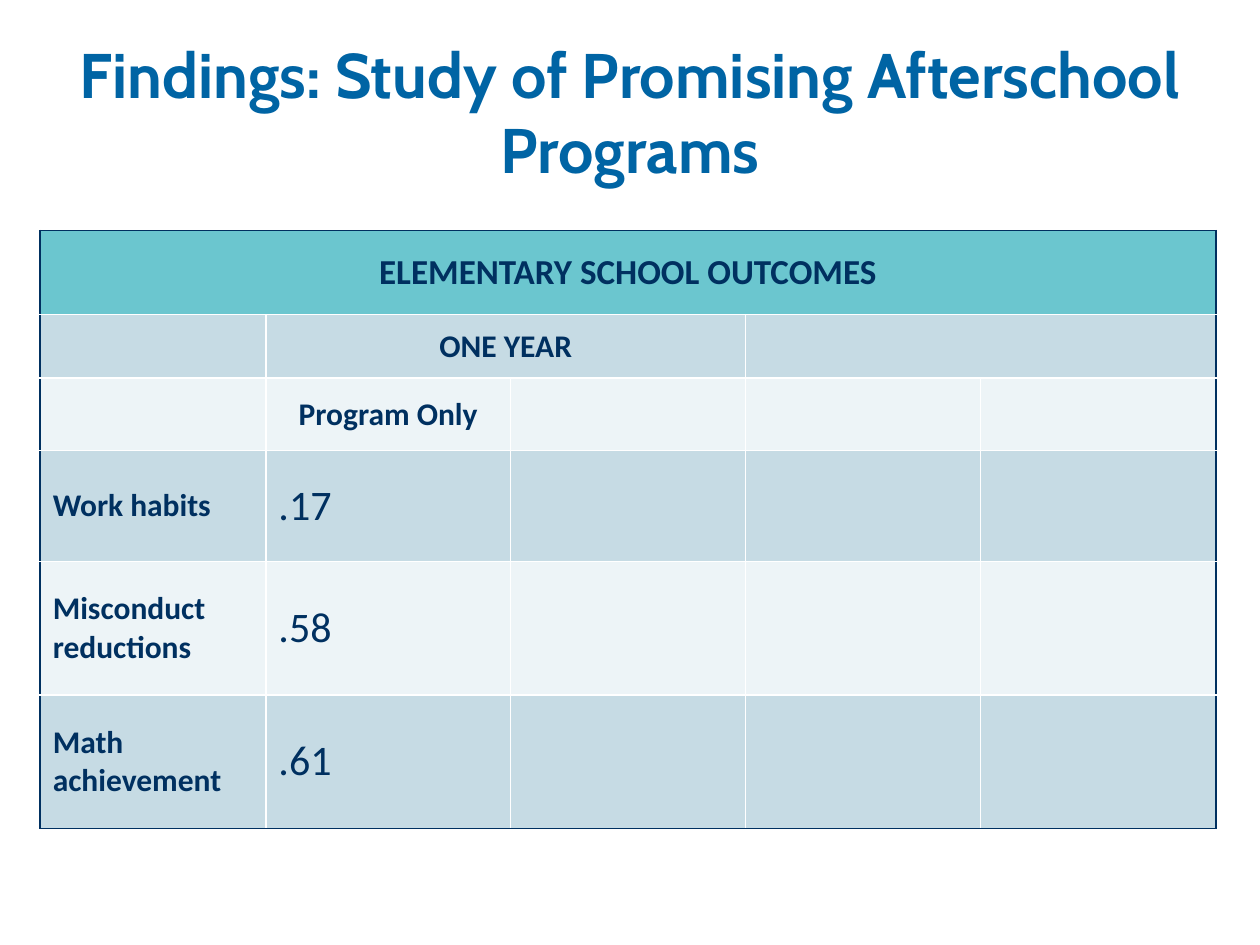
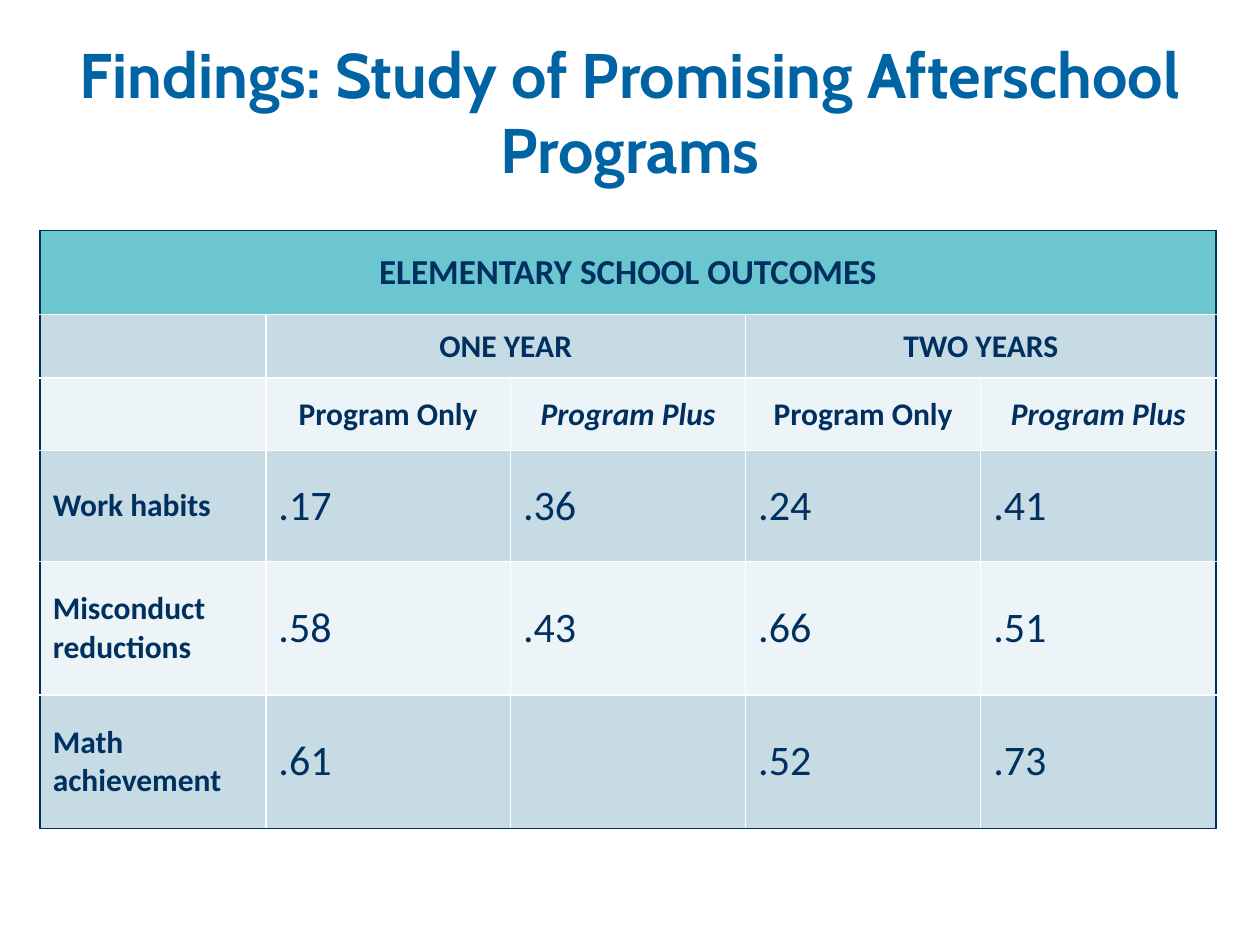
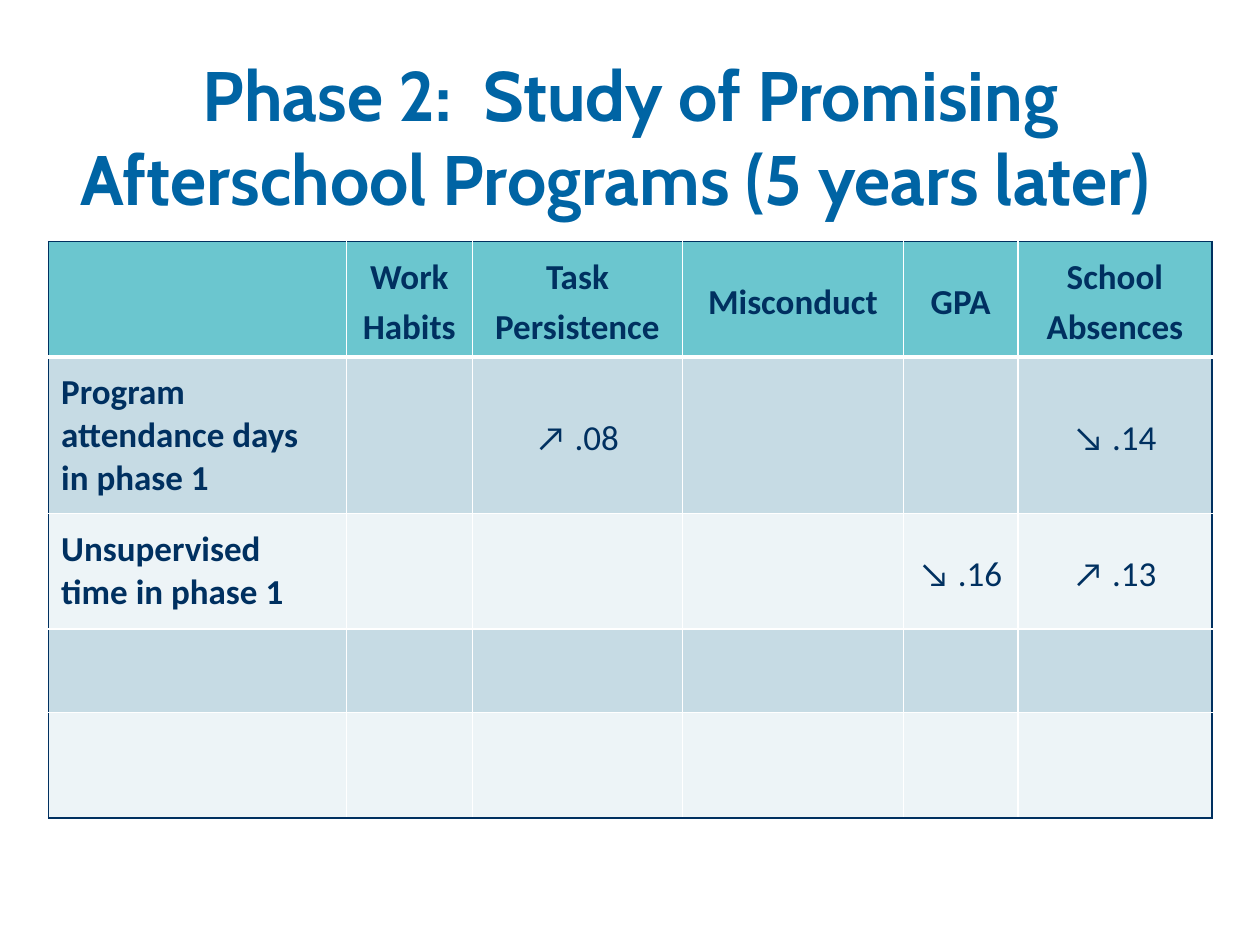
from lxml.etree import SubElement
from pptx import Presentation
from pptx.dml.color import RGBColor
from pptx.enum.text import MSO_ANCHOR, MSO_AUTO_SIZE, PP_ALIGN
from pptx.oxml.ns import qn
from pptx.util import Cm, Pt

BLUE = RGBColor(0x00, 0x64, 0xA4)
NAVY = RGBColor(0x00, 0x30, 0x60)
TEAL = RGBColor(0x6B, 0xC6, 0xCF)
MIST = RGBColor(0xC6, 0xDB, 0xE4)
PALE = RGBColor(0xED, 0xF4, 0xF7)
WHITE = RGBColor(0xFF, 0xFF, 0xFF)

TITLE_FONT = "Cabin"
BODY_FONT = "Calibri"

FINDINGS_TITLE = "Findings: Study of Promising Afterschool Programs"
PHASE_TITLE = "Phase 2:  Study of Promising Afterschool Programs (5 years later)  "

OUTCOMES = [
    ["ELEMENTARY SCHOOL OUTCOMES"],
    ["", "ONE YEAR", "", "TWO YEARS"],
    ["", "Program Only", "Program Plus", "Program Only", "Program Plus"],
    ["Work habits", ".17", ".36", ".24", ".41"],
    ["Misconduct\nreductions", ".58", ".43", ".66", ".51"],
    ["Math achievement", ".61", "", ".52", ".73"],
]
OUTCOME_WIDTHS = [4.55, 4.93, 4.74, 4.74, 4.74]
OUTCOME_HEIGHTS = [1.69, 1.28, 1.46, 2.24, 2.69, 2.69]
OUTCOME_SPANS = [(0, 0, 4), (1, 1, 2), (1, 3, 4)]

LATER_EFFECTS = [
    ["", "Work Habits", "Task Persistence", "Misconduct", "GPA", "School Absences"],
    ["Program attendance days in phase 1", "", "↗ .08", "", "", "↘ .14"],
    ["Unsupervised time in phase 1", "", "", "", "↘ .16", "↗ .13"],
    [],
    [],
]
EFFECT_WIDTHS = [6, 2.54, 4.24, 4.45, 2.31, 3.91]
EFFECT_HEIGHTS = [2.33, 3.15, 2.33, 1.68, 2.13]


def style_paragraph(paragraph, name, size, color, bold=True, italic=False,
                    align=PP_ALIGN.LEFT):
    paragraph.alignment = align
    for font in (paragraph.font, *(run.font for run in paragraph.runs)):
        font.name = name
        font.size = Pt(size)
        font.bold = bold
        font.italic = italic
        font.color.rgb = color


def add_titled_slide(prs, text, left, top, width, height, size):
    slide = prs.slides.add_slide(prs.slide_layouts[5])
    title = slide.shapes.title
    title.left, title.top = Cm(left), Cm(top)
    title.width, title.height = Cm(width), Cm(height)
    frame = title.text_frame
    frame.text = text
    frame.word_wrap = True
    frame.auto_size = MSO_AUTO_SIZE.NONE
    frame.vertical_anchor = MSO_ANCHOR.MIDDLE
    style_paragraph(frame.paragraphs[0], TITLE_FONT, size, BLUE, align=PP_ALIGN.CENTER)
    return slide


def add_grid(slide, left, top, widths, heights, spans=()):
    table = slide.shapes.add_table(
        len(heights), len(widths), Cm(left), Cm(top),
        Cm(sum(widths)), Cm(sum(heights))).table
    table.first_row = table.horz_banding = False
    for column, width in zip(table.columns, widths):
        column.width = Cm(width)
    for row, height in zip(table.rows, heights):
        row.height = Cm(height)
    for row, first, last in spans:
        table.cell(row, first).merge(table.cell(row, last))
    return table


def set_border(cell, side, color, points):
    line = SubElement(cell._tc.get_or_add_tcPr(), qn(f"a:ln{side}"), w=str(Pt(points)))
    SubElement(SubElement(line, qn("a:solidFill")), qn("a:srgbClr"), val=str(color))


def paint_grid(table, header_rule=1):
    last_row, last_column = len(table.rows) - 1, len(table.columns) - 1
    for row in range(last_row + 1):
        for column in range(last_column + 1):
            cell = table.cell(row, column)
            if cell.is_spanned:
                continue
            end = column + (cell.span_width if cell.is_merge_origin else 1) - 1
            outer_edges = {"L": column == 0, "R": end == last_column,
                           "T": row == 0, "B": row == last_row}
            for side, outer in outer_edges.items():
                points = header_rule if row == 0 and side == "B" else 1
                set_border(cell, side, NAVY if outer else WHITE, points)
            cell.fill.solid()
            cell.fill.fore_color.rgb = TEAL if row == 0 else MIST if row % 2 else PALE


def write_cell(cell, text, size, bold, centered, italic=False, line_spacing=None):
    cell.text = text
    cell.vertical_anchor = MSO_ANCHOR.MIDDLE
    align = PP_ALIGN.CENTER if centered else PP_ALIGN.LEFT
    for paragraph in cell.text_frame.paragraphs:
        style_paragraph(paragraph, BODY_FONT, size, NAVY, bold, italic, align)
        if line_spacing:
            paragraph.line_spacing = line_spacing


def filled_cells(table, rows):
    for row, texts in enumerate(rows):
        for column, text in enumerate(texts):
            if text:
                yield row, column, table.cell(row, column), text


def add_findings_slide(prs, outcomes):
    slide = add_titled_slide(prs, FINDINGS_TITLE, 1.27, 0.43, 22.86, 3.61, 36)
    table = add_grid(slide, 0.81, 4.65, OUTCOME_WIDTHS, OUTCOME_HEIGHTS, OUTCOME_SPANS)
    paint_grid(table)
    for row, column, cell, text in filled_cells(table, outcomes):
        heading = row < 3
        value = not heading and column > 0
        size = 20 if row == 0 else 24 if value else 18
        write_cell(cell, text, size, not value, heading, text == "Program Plus")


def add_phase_slide(prs):
    slide = add_titled_slide(prs, PHASE_TITLE, 1.07, 0.56, 23.29, 4.34, 40)
    table = add_grid(slide, 0.98, 4.87, EFFECT_WIDTHS, EFFECT_HEIGHTS)
    paint_grid(table, header_rule=3)
    for row, column, cell, text in filled_cells(table, LATER_EFFECTS):
        label = column == 0
        write_cell(cell, text, 20, label or row == 0, not label,
                   line_spacing=None if label else 1.15)
        if not label:
            cell.margin_left = cell.margin_right = Cm(0.18)
            cell.margin_top = cell.margin_bottom = 0


def main():
    prs = Presentation()
    prs.slide_width, prs.slide_height = Cm(25.4), Cm(19.05)
    add_findings_slide(prs, [texts[:2] for texts in OUTCOMES])
    add_findings_slide(prs, OUTCOMES)
    add_phase_slide(prs)
    prs.save("out.pptx")


if __name__ == "__main__":
    main()
